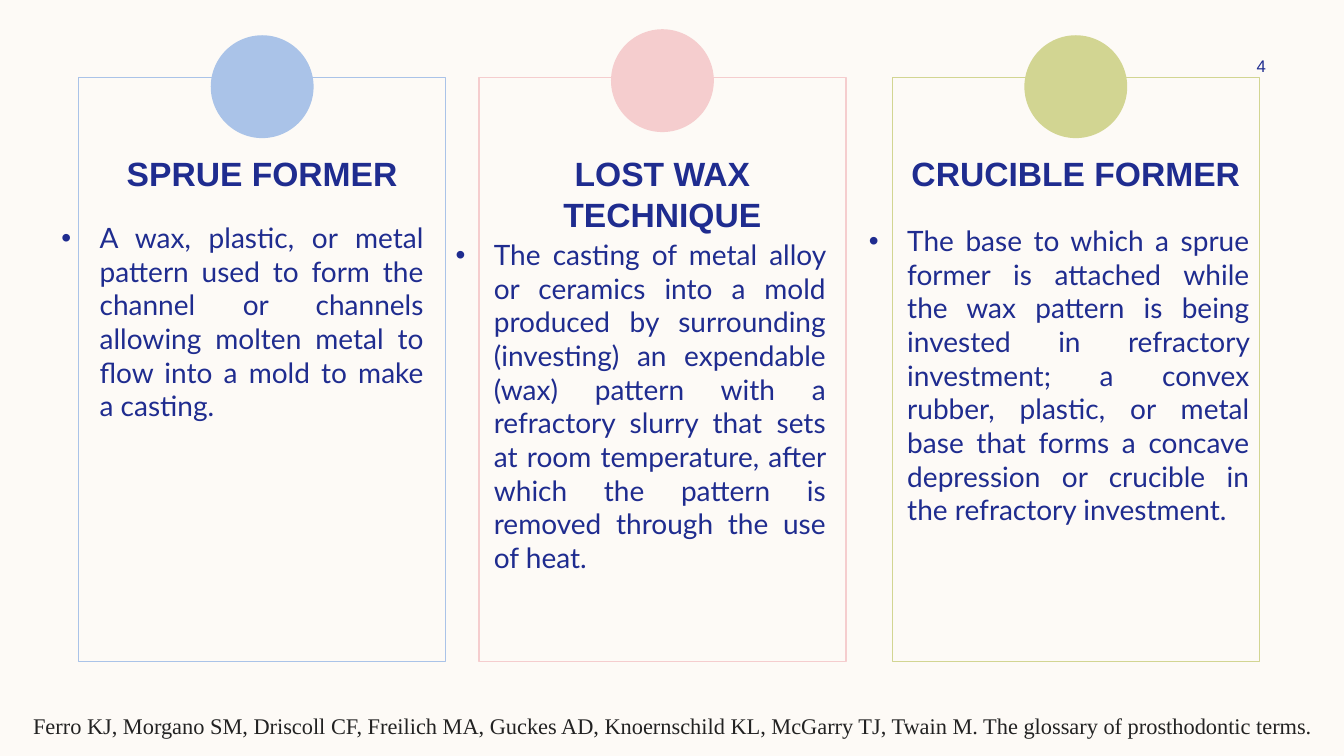
from lxml import etree
from pptx import Presentation
from pptx import util as u
from pptx.dml.color import RGBColor
from pptx.enum import shapes, text
from pptx.oxml.ns import qn

NAVY = "1F2C8F"
CARD_TOP, CARD_WIDTH, CARD_HEIGHT = 0.77, 3.64, 5.79
CIRCLE = 1.02
INDENT = 0.38

TERMS = [
    dict(left=0.78, color="AAC3E8", circle_top=0.35, term="SPRUE FORMER",
         definition_box=(0.51, 2.14, 3.79, 2.41),
         definition="A wax, plastic, or metal pattern used to form the channel or "
                    "channels allowing molten metal to flow into a mold to make a casting."),
    dict(left=4.75, color="F5CDCE", circle_top=0.29, term="LOST WAX TECHNIQUE",
         definition_box=(4.42, 2.31, 3.87, 3.43),
         definition="The casting of metal alloy or ceramics into a mold produced by "
                    "surrounding (investing) an expendable (wax) pattern with a refractory "
                    "slurry that sets at room temperature, after which the pattern is "
                    "removed through the use of heat."),
    dict(left=8.85, color="D2D592", circle_top=0.35, term="CRUCIBLE FORMER",
         definition_box=(8.52, 2.17, 3.97, 2.41),
         definition="The base to which a sprue former is attached while the wax pattern "
                    "is being invested in refractory investment; a convex rubber, plastic, "
                    "or metal base that forms a concave depression or crucible in the "
                    "refractory investment."),
]


def rgb(value):
    """Turn a hex string into a colour."""
    return RGBColor.from_string(value)


def write(shape, wording, size, font, color, align, bold=False):
    """Set one styled paragraph in a shape and return it."""
    shape.text_frame.word_wrap = True
    line = shape.text_frame.paragraphs[0]
    line.text = wording
    line.alignment = align
    style = line.runs[0].font
    style.size, style.name, style.bold = u.Pt(size), font, bold
    style.color.rgb = rgb(color)
    return line


def add_label(slide, box, *styling):
    """Add a text box holding one styled paragraph and return both."""
    label = slide.shapes.add_textbox(*map(u.Inches, box))
    return label, write(label, *styling)


def add_bullet(line):
    """Give a paragraph a hanging round bullet."""
    properties = line._p.get_or_add_pPr()
    properties.set("marL", str(u.Inches(INDENT)))
    properties.set("indent", str(-u.Inches(INDENT)))
    etree.SubElement(properties, qn("a:buFont")).set("typeface", "Arial")
    etree.SubElement(properties, qn("a:buChar")).set("char", "•")


def add_frame(slide, left, color, term):
    """Draw an outlined card with its term at the top."""
    frame = slide.shapes.add_shape(
        shapes.MSO_SHAPE.RECTANGLE,
        *map(u.Inches, (left, CARD_TOP, CARD_WIDTH, CARD_HEIGHT)))
    frame.shadow.inherit = False
    frame.fill.background()
    frame.line.color.rgb = rgb(color)
    frame.line.width = u.Pt(1)
    frame.text_frame.margin_top = u.Inches(0.75)
    frame.text_frame.vertical_anchor = text.MSO_ANCHOR.TOP
    write(frame, term, 24, "Arial", NAVY, text.PP_ALIGN.CENTER, True)


def add_circle(slide, left, top, color):
    """Draw a filled circle centred over the card at the given left."""
    circle = slide.shapes.add_shape(
        shapes.MSO_SHAPE.OVAL,
        *map(u.Inches, (left + (CARD_WIDTH - CIRCLE) / 2, top, CIRCLE, CIRCLE)))
    circle.shadow.inherit = False
    circle.fill.solid()
    circle.fill.fore_color.rgb = rgb(color)
    circle.line.fill.background()


def add_term_card(slide, left, color, circle_top, term, definition_box, definition):
    """Build one glossary card: frame, definition and circle."""
    add_frame(slide, left, color, term)
    _, line = add_label(slide, definition_box, definition, 20, "Lato", NAVY,
                        text.PP_ALIGN.JUSTIFY)
    line.space_before = u.Pt(3.6)
    add_bullet(line)
    add_circle(slide, left, circle_top, color)


def add_page_number(slide, box):
    """Place the slide number."""
    number, _ = add_label(slide, box, "4", 12, "Arial", NAVY, text.PP_ALIGN.CENTER)
    number.text_frame.vertical_anchor = text.MSO_ANCHOR.MIDDLE


def add_citation(slide, box):
    """Place the reference line at the foot."""
    citation, _ = add_label(
        slide, box,
        "Ferro KJ, Morgano SM, Driscoll CF, Freilich MA, Guckes AD, Knoernschild KL, "
        "McGarry TJ, Twain M. The glossary of prosthodontic terms.",
        16, "Times New Roman", "222222", text.PP_ALIGN.JUSTIFY)
    citation.text_frame.auto_size = text.MSO_AUTO_SIZE.SHAPE_TO_FIT_TEXT


def main():
    """Build and save the glossary slide."""
    deck = Presentation()
    deck.slide_width, deck.slide_height = u.Inches(13.33), u.Inches(7.5)
    slide = deck.slides.add_slide(deck.slide_layouts[6])
    slide.background.fill.solid()
    slide.background.fill.fore_color.rgb = rgb("FDFAF6")
    add_page_number(slide, (11.97, 0.5, 1.08, 0.3))
    for entry in TERMS:
        add_term_card(slide, **entry)
    add_citation(slide, (0.23, 7.02, 13.2, 0.37))
    deck.save("out.pptx")


if __name__ == "__main__":
    main()
